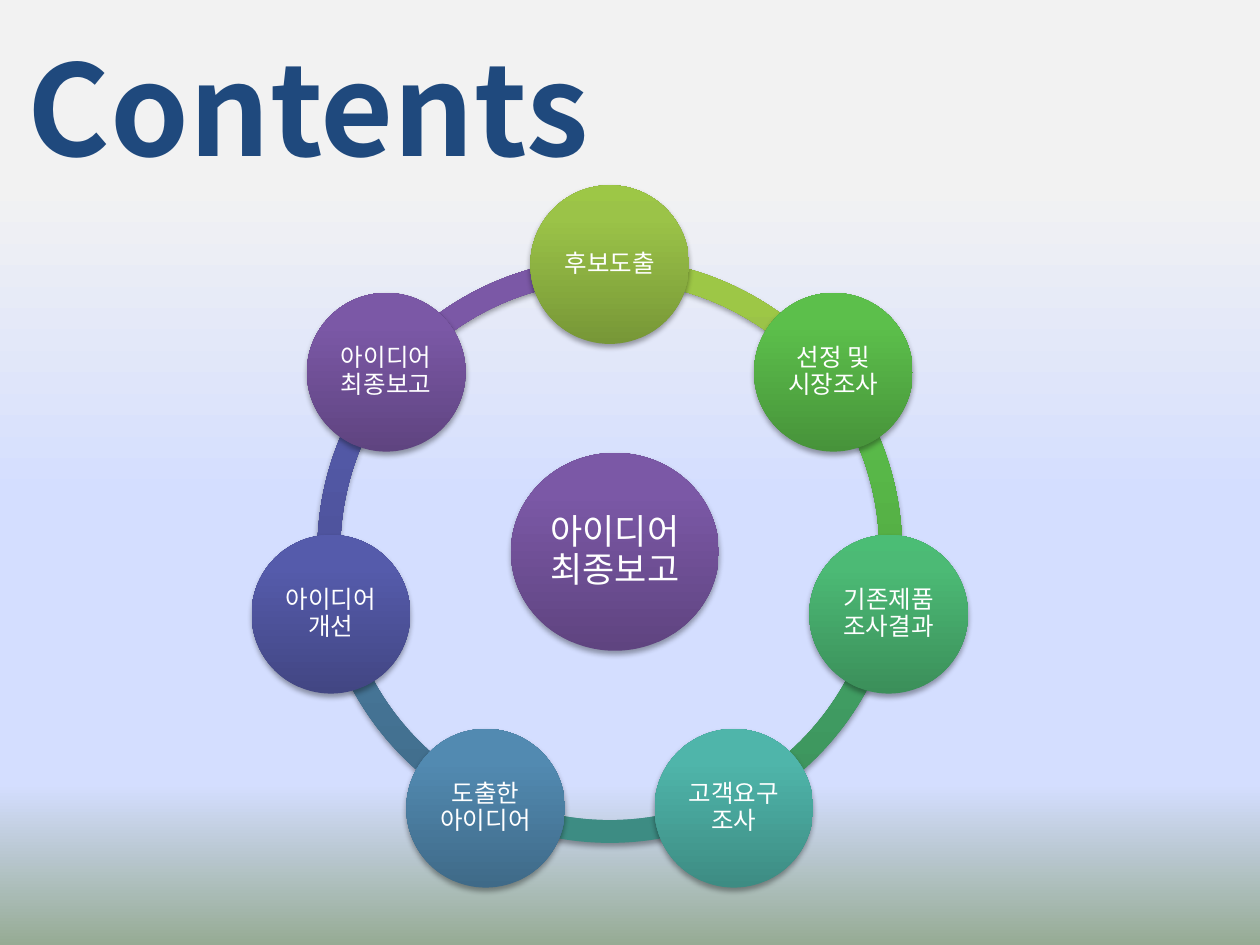
from math import cos, radians, sin

from lxml import etree
from pptx import Presentation
from pptx.dml.color import RGBColor
from pptx.enum.shapes import MSO_SHAPE
from pptx.enum.text import MSO_ANCHOR, PP_ALIGN
from pptx.oxml.ns import qn
from pptx.util import Inches, Pt

THEME = {
    "font": "Noto Sans CJK KR",
    "title": "1F497D",
    "label": "FFFFFF",
    "title_size": 72,
    "step_size": 14,
    "center_size": 20,
    "background": [(19, "F2F2F2"), (53, "D4DEFF"), (83, "D4DEFF"), (100, "96AB94")],
    "lime": [(0, "779737"), (80, "9BC348"), (100, "9DC746")],
    "green": [(0, "47933A"), (80, "5CBF4B"), (100, "5BC249")],
    "emerald": [(0, "3B8F5A"), (80, "4CBA75"), (100, "4BBD75")],
    "teal": [(0, "3D8C83"), (80, "4FB5AA"), (100, "4EB8AC")],
    "blue": [(0, "3F6A88"), (80, "528AB1"), (100, "518AB3")],
    "indigo": [(0, "424683"), (80, "555BAB"), (100, "545AAD")],
    "purple": [(0, "5F4480"), (80, "7B58A6"), (100, "7C57A8")],
}

# Steps clockwise from the top
STEPS = [
    ("후보도출", "lime"),
    ("선정 및 시장조사", "green"),
    ("기존제품조사결과", "emerald"),
    ("고객요구조사", "teal"),
    ("도출한 아이디어", "blue"),
    ("아이디어 개선", "indigo"),
    ("아이디어 최종보고", "purple"),
]
CENTER_X, CENTER_Y = 4.84, 4.37
RING_SIZE, ORBIT_RADIUS, STEP_SIZE = 4.64, 2.27, 1.26
STEP_ANGLE = 360 / len(STEPS)
ADJUSTMENT_PER_DEGREE = 0.6


def set_gradient(fill, element, stops, angle):
    fill.gradient()
    stop_list = element.find(".//" + qn("a:gsLst"))
    for stop in list(stop_list):
        stop_list.remove(stop)
    for position, color in stops:
        stop = etree.SubElement(stop_list, qn("a:gs"), pos=str(position * 1000))
        etree.SubElement(stop, qn("a:srgbClr"), val=color)
    element.find(".//" + qn("a:lin")).set("ang", str(angle * 60000))


def add_glossy_shape(kind, x, y, width, height, color, text="", size=0):
    """Add a shape centred on x, y with gradient, soft shadow and optional label."""
    shape = slide.shapes.add_shape(
        kind, Inches(x - width / 2), Inches(y - height / 2), Inches(width), Inches(height))
    set_gradient(shape.fill, shape.element.spPr, THEME[color], 270)
    shape.line.fill.background()
    shape.shadow.inherit = False
    shadow = etree.SubElement(
        shape.element.spPr.find(qn("a:effectLst")), qn("a:outerShdw"),
        blurRad="40000", dist="23000", dir="5400000", rotWithShape="0")
    shadow_color = etree.SubElement(shadow, qn("a:srgbClr"), val="000000")
    etree.SubElement(shadow_color, qn("a:alpha"), val="35000")
    if text:
        frame = shape.text_frame
        frame.text = text
        frame.word_wrap = True
        frame.vertical_anchor = MSO_ANCHOR.MIDDLE
        frame.margin_left = frame.margin_right = Inches(0.01)
        frame.margin_top = frame.margin_bottom = Inches(0.01)
        paragraph = frame.paragraphs[0]
        paragraph.alignment = PP_ALIGN.CENTER
        paragraph.line_spacing = 0.9
        labels.append((paragraph.runs[0], size, THEME["label"], False))
    return shape


presentation = Presentation()
presentation.slide_width, presentation.slide_height = Inches(10), Inches(7.5)
slide = presentation.slides.add_slide(presentation.slide_layouts[5])
set_gradient(slide.background.fill, slide.element, THEME["background"], 90)
labels = []

# Title
title = slide.shapes.title
title.left, title.top = Inches(0.12), Inches(0.19)
title.width, title.height = Inches(7.24), Inches(1.99)
title.text_frame.text = "Contents"
title.text_frame.vertical_anchor = MSO_ANCHOR.TOP
title.text_frame.paragraphs[0].alignment = PP_ALIGN.LEFT
labels.append((title.text_frame.paragraphs[0].runs[0],
               THEME["title_size"], THEME["title"], True))

# Ring segments, each leading from one step to the next
for index, (text, color) in reversed(list(enumerate(STEPS))):
    start = 270 + index * STEP_ANGLE
    arc = add_glossy_shape(
        MSO_SHAPE.BLOCK_ARC, CENTER_X, CENTER_Y, RING_SIZE, RING_SIZE, color)
    arc.adjustments[0] = start % 360 * ADJUSTMENT_PER_DEGREE
    arc.adjustments[1] = (start + STEP_ANGLE) % 360 * ADJUSTMENT_PER_DEGREE
    arc.adjustments[2] = 0.039

# Step circles
for index, (text, color) in enumerate(STEPS):
    angle = radians(index * STEP_ANGLE)
    add_glossy_shape(
        MSO_SHAPE.OVAL, CENTER_X + ORBIT_RADIUS * sin(angle),
        CENTER_Y - ORBIT_RADIUS * cos(angle), STEP_SIZE, STEP_SIZE,
        color, text, THEME["step_size"])

# Central result
add_glossy_shape(MSO_SHAPE.OVAL, 4.88, 4.38, 1.65, 1.57, "purple",
                 "아이디어 최종보고", THEME["center_size"])

# Type, for Latin and Korean letters alike
for run, size, color, bold in labels:
    run.font.name = THEME["font"]
    run.font.size = Pt(size)
    run.font.bold = bold
    run.font.color.rgb = RGBColor.from_string(color)
    etree.SubElement(run.font._element if hasattr(run.font, "_element")
                     else run._r.get_or_add_rPr(), qn("a:ea"), typeface=THEME["font"])

presentation.save("out.pptx")
